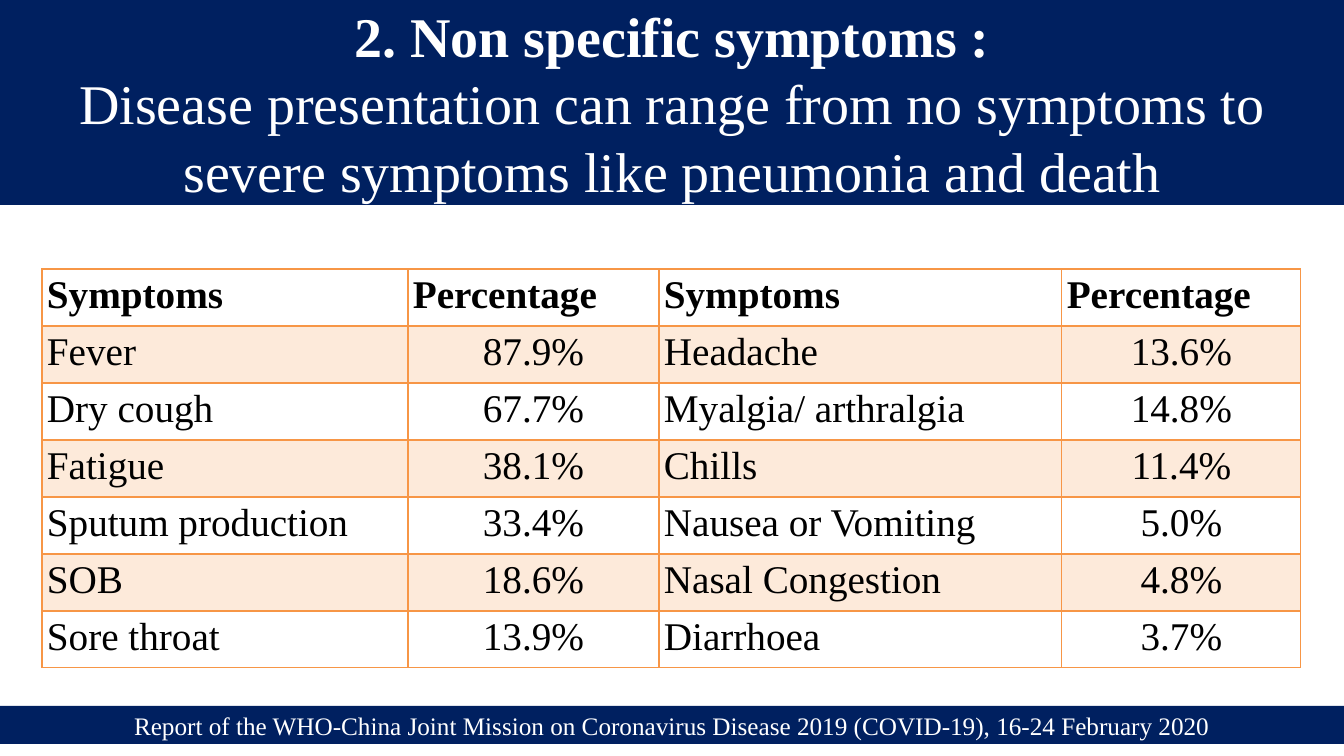
from lxml import etree
from pptx import Presentation
from pptx import util as u
from pptx.dml.color import RGBColor
from pptx.enum import shapes, text
from pptx.oxml import ns

PX_PER_INCH = 100.8
FONT = "Times New Roman"
NAVY, WHITE, BLACK = "002060", "FFFFFF", "000000"
ORANGE, PEACH = "F79646", "FDEADA"

SLIDE_SIZE = (1344, 756)
TITLE_BOX = (0, 0, 1344, 205)
FOOTER_BOX = (0, 706, 1344, 38)
TABLE_ORIGIN = (42, 269)
COLUMN_WIDTHS = (366, 251, 403, 239)
ROW_HEIGHT = 57
INSET = 5

# Each line: wording, size in points, bold
TITLE = [
    ("2. Non specific symptoms :", 40, True),
    ("Disease presentation can range from no symptoms to "
     "severe symptoms like pneumonia and death", 40, False),
]
FOOTER = [
    ("Report of the WHO-China Joint Mission on Coronavirus Disease 2019 "
     "(COVID-19), 16-24 February 2020", 18, False),
]
SYMPTOMS = [
    ("Symptoms", "Percentage", "Symptoms", "Percentage"),
    ("Fever", "87.9%", "Headache", "13.6%"),
    ("Dry cough", "67.7%", "Myalgia/ arthralgia", "14.8%"),
    ("Fatigue", "38.1%", "Chills", "11.4%"),
    ("Sputum production", "33.4%", "Nausea or Vomiting", "5.0%"),
    ("SOB", "18.6%", "Nasal Congestion", "4.8%"),
    ("Sore throat", "13.9%", "Diarrhoea", "3.7%"),
]


def px(length):
    return u.Inches(length / PX_PER_INCH)


def color(value):
    return RGBColor.from_string(value)


def set_insets(holder):
    """Give a text frame or a table cell the same margin on all sides."""
    holder.margin_left = holder.margin_right = px(INSET)
    holder.margin_top = holder.margin_bottom = px(INSET)


def write(paragraph, wording, size, bold, font_color, centred):
    paragraph.alignment = text.PP_ALIGN.CENTER if centred else text.PP_ALIGN.LEFT
    run = paragraph.add_run()
    run.text = wording
    run.font.name = FONT
    run.font.size = u.Pt(size)
    run.font.bold = bold
    run.font.color.rgb = color(font_color)


def add_banner(slide, box, lines):
    banner = slide.shapes.add_shape(shapes.MSO_SHAPE.RECTANGLE, *map(px, box))
    banner.shadow.inherit = False
    banner.fill.solid()
    banner.fill.fore_color.rgb = color(NAVY)
    banner.line.fill.background()
    frame = banner.text_frame
    frame.word_wrap = True
    frame.vertical_anchor = text.MSO_ANCHOR.MIDDLE
    set_insets(frame)
    for index, (wording, size, bold) in enumerate(lines):
        paragraph = frame.add_paragraph() if index else frame.paragraphs[0]
        write(paragraph, wording, size, bold, WHITE, True)


def add_borders(cell, widths):
    """Draw the cell's edges; widths maps L, R, T and B to points."""
    properties = cell._tc.get_or_add_tcPr()
    for side, width in widths.items():
        line = etree.SubElement(properties, ns.qn(f"a:ln{side}"), w=str(u.Pt(width)))
        fill = etree.SubElement(line, ns.qn("a:solidFill"))
        etree.SubElement(fill, ns.qn("a:srgbClr"), val=ORANGE)


def add_symptom_table(slide):
    width, height = sum(COLUMN_WIDTHS), ROW_HEIGHT * len(SYMPTOMS)
    table = slide.shapes.add_table(
        len(SYMPTOMS), len(COLUMN_WIDTHS), *map(px, (*TABLE_ORIGIN, width, height))
    ).table
    table.first_row = table.horz_banding = False
    for column, column_width in zip(table.columns, COLUMN_WIDTHS):
        column.width = px(column_width)
    for row_index, row in enumerate(SYMPTOMS):
        table.rows[row_index].height = px(ROW_HEIGHT)
        header = row_index == 0
        for column_index, wording in enumerate(row):
            cell = table.cell(row_index, column_index)
            set_insets(cell)
            top = 2 if row_index == 1 else 1
            add_borders(cell, {"L": 1, "R": 1, "T": top, "B": 2 if header else 1})
            if row_index % 2:
                cell.fill.solid()
                cell.fill.fore_color.rgb = color(PEACH)
            else:
                cell.fill.background()
            centred = not header and column_index % 2 == 1
            write(cell.text_frame.paragraphs[0], wording, 28, header, BLACK, centred)


def main():
    presentation = Presentation()
    presentation.slide_width, presentation.slide_height = map(px, SLIDE_SIZE)
    slide = presentation.slides.add_slide(presentation.slide_layouts[6])
    add_banner(slide, TITLE_BOX, TITLE)
    add_symptom_table(slide)
    add_banner(slide, FOOTER_BOX, FOOTER)
    presentation.save("out.pptx")


if __name__ == "__main__":
    main()
